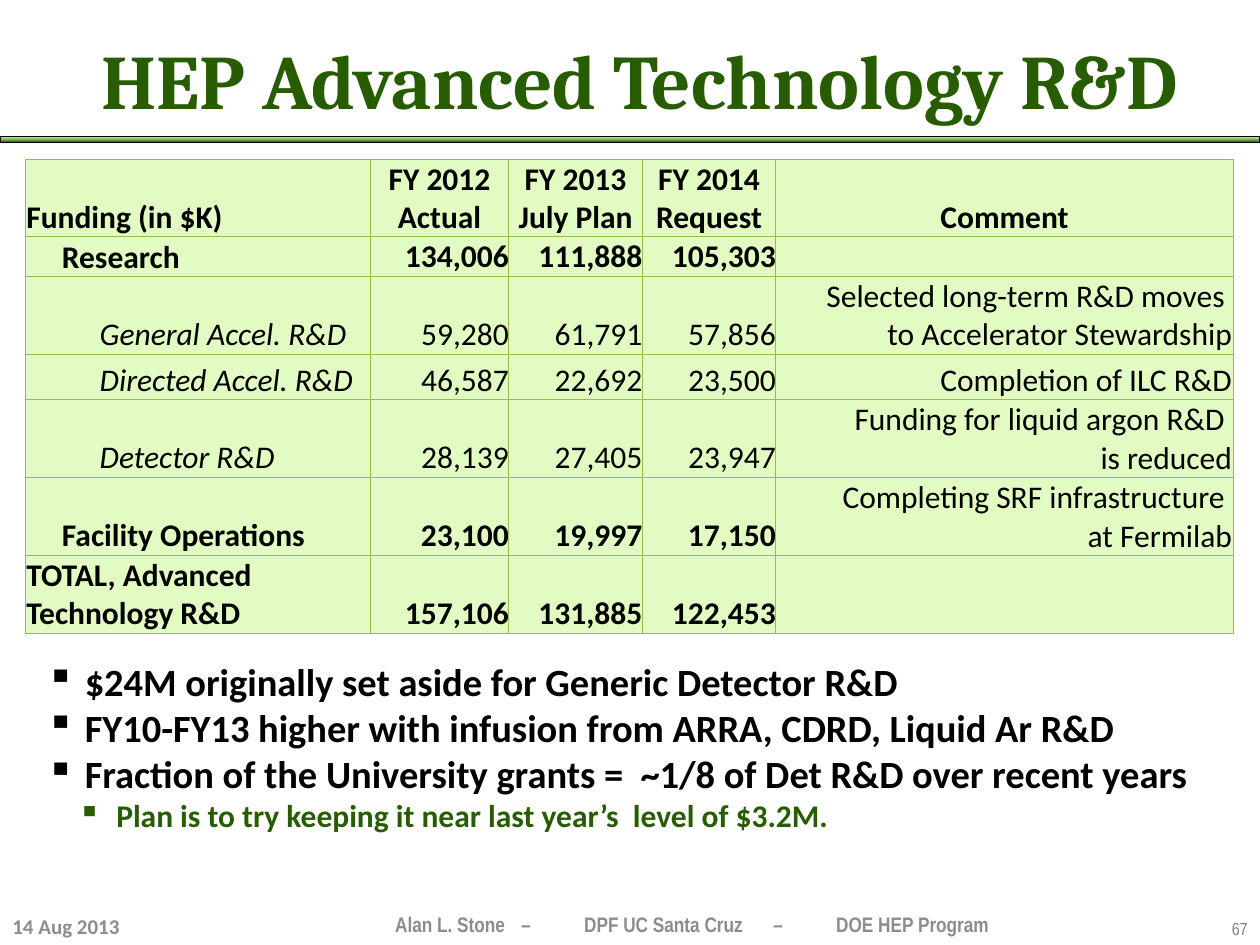
from dataclasses import dataclass

from lxml import etree
from pptx import Presentation
from pptx import util as u
from pptx.dml.color import RGBColor
from pptx.enum import shapes, text
from pptx.oxml.ns import qn

Pt = u.Pt
LEFT, CENTER, RIGHT = text.PP_ALIGN.LEFT, text.PP_ALIGN.CENTER, text.PP_ALIGN.RIGHT
TOP, MIDDLE, BOTTOM = (text.MSO_ANCHOR.TOP, text.MSO_ANCHOR.MIDDLE,
                       text.MSO_ANCHOR.BOTTOM)


@dataclass(frozen=True)
class Theme:
    ink: str = "000000"
    green: str = "285C00"
    cell: str = "E2FBC2"
    border: str = "98B955"
    footer: str = "8C8C8C"
    number: str = "808080"
    band: tuple = ((0, "DDEBCF"), (50, "9CB86E"), (100, "156B13"))
    body_font: str = "Calibri"
    title_font: str = "Cambria"
    footer_font: str = "Arial Narrow"
    title_size: float = 44
    bullet_size: float = 22
    body_size: float = 18
    footer_size: float = 12
    number_size: float = 10


def add_color(parent, value):
    etree.SubElement(parent, qn("a:srgbClr"), val=value)


def write(para, words, *, font, size, color, bold=False, italic=False,
          align=LEFT, indent=0, hanging=0, bullet=None, tabs=()):
    props = para._p.get_or_add_pPr()
    props.set("marL", str(Pt(indent)))
    props.set("indent", str(Pt(-hanging)))
    if bullet:
        etree.SubElement(props, qn("a:buChar"), char=bullet)
    if tabs:
        stops = etree.SubElement(props, qn("a:tabLst"))
        for stop in tabs:
            etree.SubElement(stops, qn("a:tab"), pos=str(Pt(stop)), algn="l")
    para.alignment = align
    span = para.add_run()
    span.text = words
    span.font.name = font
    span.font.size = Pt(size)
    span.font.bold = bold
    span.font.italic = italic
    span.font.color.rgb = RGBColor.from_string(color)


class SlideBuilder:
    def __init__(self, slide, theme):
        self.slide = slide
        self.theme = theme

    def band(self, left, top, width, height):
        shape = self.slide.shapes.add_shape(
            shapes.MSO_SHAPE.RECTANGLE, Pt(left), Pt(top), Pt(width), Pt(height))
        shape.shadow.inherit = False
        shape.fill.gradient()
        shape.fill.gradient_angle = 270
        stops = shape._element.spPr.find(".//" + qn("a:gsLst"))
        for stop in list(stops):
            stops.remove(stop)
        for percent, color in self.theme.band:
            add_color(etree.SubElement(stops, qn("a:gs"), pos=str(percent * 1000)), color)
        shape.line.color.rgb = RGBColor.from_string(self.theme.ink)
        shape.line.width = Pt(0.5)

    def text(self, left, top, width, height, lines, anchor=TOP, inset=7.2):
        box = self.slide.shapes.add_textbox(Pt(left), Pt(top), Pt(width), Pt(height))
        frame = box.text_frame
        frame.word_wrap = True
        frame.vertical_anchor = anchor
        frame.margin_left = Pt(inset)
        for index, (words, style) in enumerate(lines):
            para = frame.add_paragraph() if index else frame.paragraphs[0]
            write(para, words, **style)

    def cell(self, cell, words, inset, margin, **style):
        theme = self.theme
        cell.vertical_anchor = BOTTOM
        cell.margin_left = Pt(inset)
        cell.margin_right = cell.margin_top = Pt(margin)
        cell.margin_bottom = 0
        props = cell._tc.get_or_add_tcPr()
        for side in ("lnL", "lnR", "lnT", "lnB"):
            line = etree.SubElement(props, qn("a:" + side), w=str(Pt(0.75)))
            add_color(etree.SubElement(line, qn("a:solidFill")), theme.border)
        cell.fill.solid()
        cell.fill.fore_color.rgb = RGBColor.from_string(theme.cell)
        if not words:
            cell.text_frame.paragraphs[0].font.size = Pt(theme.body_size)
            return
        for index, part in enumerate(words.split("\n")):
            frame = cell.text_frame
            para = frame.add_paragraph() if index else frame.paragraphs[0]
            write(para, part, font=theme.body_font, size=theme.body_size,
                  color=theme.ink, **style)

    def table(self, left, top, widths, rows):
        table = self.slide.shapes.add_table(
            len(rows), len(widths), Pt(left), Pt(top), Pt(sum(widths)),
            Pt(sum(row[0] for row in rows))).table
        table.first_row = table.horz_banding = False
        for column, width in zip(table.columns, widths):
            column.width = Pt(width)
        for r, (height, level, *values) in enumerate(rows):
            table.rows[r].height = Pt(height)
            for c, words in enumerate(values):
                label, comment = c == 0, c == len(values) - 1
                align = LEFT if label else CENTER if r == 0 else RIGHT
                self.cell(
                    table.cell(r, c), words,
                    inset=21 if label and level else 0.7 if label or comment else 0,
                    margin=0.7 if label or comment else 0,
                    bold=level < 2 and (r == 0 or not comment),
                    italic=label and level == 2, align=align,
                    indent=21.6 if label and level == 2 else 0)


ROWS = [
    (44, 0, "Funding (in $K)", "FY 2012 Actual", "FY 2013 July Plan",
     "FY 2014 Request", "Comment"),
    (22.5, 1, "Research", "134,006", "111,888", "105,303", ""),
    (44.5, 2, "General Accel. R&D", "59,280", "61,791", "57,856",
     "Selected long-term R&D moves \nto Accelerator Stewardship"),
    (26, 2, "Directed Accel. R&D", "46,587", "22,692", "23,500",
     "Completion of ILC R&D"),
    (44.5, 2, "Detector R&D", "28,139", "27,405", "23,947",
     "Funding for liquid argon R&D \nis reduced"),
    (44.5, 1, "Facility Operations", "23,100", "19,997", "17,150",
     "Completing SRF infrastructure \nat Fermilab"),
    (44.5, 0, "TOTAL, Advanced\nTechnology R&D", "157,106", "131,885", "122,453", ""),
]
POINTS = [
    "$24M originally set aside for Generic Detector R&D",
    "FY10-FY13 higher with infusion from ARRA, CDRD, Liquid Ar R&D",
    "Fraction of the University grants =  ~1/8 of Det R&D over recent years",
]


def main():
    deck = Presentation()
    deck.slide_width, deck.slide_height = Pt(720), Pt(540)
    theme = Theme()
    page = SlideBuilder(deck.slides.add_slide(deck.slide_layouts[6]), theme)

    page.band(0, 77.8, 720, 3.4)
    footer = dict(size=theme.footer_size, color=theme.footer, bold=True)
    page.text(185.8, 516.2, 401.8, 23.8, [
        ("Alan L. Stone\t–\tDPF UC Santa Cruz\t–\tDOE HEP Program",
         dict(footer, font=theme.footer_font, tabs=(81.7, 103.4, 210.9, 232)))],
        anchor=MIDDLE, inset=40)
    page.text(21.6, 16.6, 688.3, 56.9, [
        ("HEP Advanced Technology R&D",
         dict(font=theme.title_font, size=theme.title_size, color=theme.green,
              bold=True, align=CENTER))], anchor=MIDDLE)
    page.table(14.4, 91.4, (197.2, 79.2, 76.3, 76.3, 261.4), ROWS)
    page.text(0, 518.4, 77, 21.6, [
        ("14 Aug 2013", dict(footer, font=theme.body_font))], anchor=MIDDLE)
    point = dict(font=theme.body_font, size=theme.bullet_size, color=theme.ink,
                 bold=True, bullet="▪", indent=22, hanging=22)
    subpoint = dict(point, size=theme.body_size, color=theme.green, indent=40)
    page.text(19.4, 372.2, 681.1, 108.7, [
        *((words, point) for words in POINTS),
        ("Plan is to try keeping it near last year’s  level of $3.2M.", subpoint)])
    page.text(690.5, 521.3, 29.5, 18.7, [
        ("67", dict(font=theme.footer_font, size=theme.number_size,
                    color=theme.number, align=RIGHT))])
    deck.save("out.pptx")


if __name__ == "__main__":
    main()
